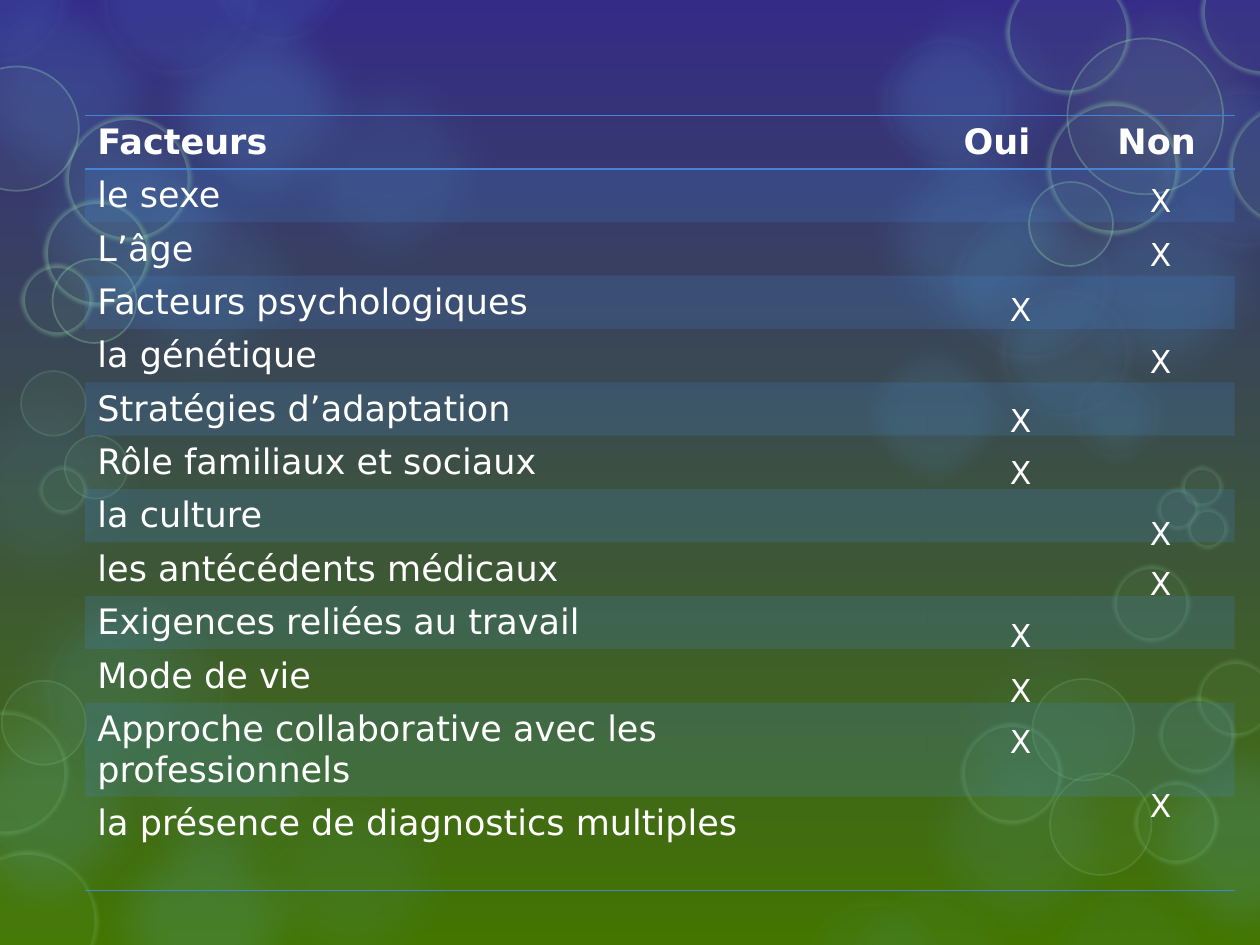
"""Build a slide with a table of factors, yes/no marks and a backdrop of soft circles."""
from lxml.etree import SubElement
from pptx import Presentation
from pptx.dml.color import RGBColor as RGB
from pptx.enum.shapes import MSO_SHAPE as Shape
from pptx.enum.text import MSO_AUTO_SIZE as Fit, PP_ALIGN as Align
from pptx.oxml import parse_xml
from pptx.oxml.ns import nsdecls, qn
from pptx.util import Pt

FONT, WHITE, ACCENT = "DejaVu Sans", "FFFFFF", "4584D3"
SKY, PALE, MINT = "5BBAF6", "DDF1FD", "9DE3AE"
BACK = ["342B87", "437500"]
NO_STYLE = "{2D5ABB26-0587-4C30-8999-92F81FD0307C}"

HEAD = ["Facteurs", "Oui ", "Non"]
FACTORS = [
    ("le sexe", "Non", 100),
    ("L’âge", "Non", 131),
    ("Facteurs psychologiques", "Oui", 162),
    ("la génétique", "Non", 192),
    ("Stratégies d’adaptation", "Oui", 225.5),
    ("Rôle familiaux et sociaux", "Oui", 255.5),
    ("la culture", "Non", 290),
    ("les antécédents médicaux", "Non", 319),
    ("Exigences reliées au travail", "Oui", 348.5),
    ("Mode de vie", "Oui", 380),
    ("Approche collaborative avec les professionnels", "Oui", 409),
    ("la présence de diagnostics multiples", "Non", 445.5),
]
MARK_X = {"Oui": 570, "Non": 650}
LEFT, TOP = 48.5, 66
WIDTHS = [481.5, 86.5, 89]
ROW, TALL = 30.5, 53.7

GLOWS = [
    (SKY, 5, [(525, 343)]),
    (SKY, 8, [(-18, 318), (55, 377), (125, 429), (-50, 203)]),
    (SKY, 10, [(41, 86), (148, 22), (482, -21), (508, 405)]),
    (MINT, 10, [(590, -23)]),
    (SKY, 14, [(-40, -23)]),
    (SKY, 15, [(0, 52), (590, 86), (482, 62)]),
    (SKY, 16, [(41, 451), (634, 405), (-49, 390)]),
    (SKY, 20, [(73, -13)]),
]
GLOW_SIZE, GLOW_SOFT = 150, 25

RINGS = [
    (SKY, 10, None, 12, [(486, 189, 96)]),
    (SKY, 10, (PALE, 14, 6), 12, [
        (661, 47, 99), (500, 17, 82), (541, 114, 96), (568, 161, 82),
        (610, 210, 57), (54, -47, 94), (118, -54, 82), (-41, -42, 82)]),
    (SKY, 6, (PALE, 14, 4), 12, [
        (22, 341, 110), (454, 511, 90), (482, 505, 99), (596, 505, 96)]),
    (MINT, 5, (MINT, 5, 15), 2.5, [
        (-25, 486, 81), (-32, 406, 71), (549, 413, 58), (648, 446, 48),
        (636, 323, 44), (662, 398, 44), (684, 377, 44), (675, 266, 24),
        (661, 279, 24), (678, 290, 24), (22, 266, 28)]),
    (MINT, 5, (MINT, 5, 30), 2.5, [
        (37, 66, 72), (25, 114, 61), (12, 151, 41), (575, -17, 71),
        (686, -29, 72), (702, 59, 71), (598, 58, 76)]),
    (MINT, 5, (MINT, 1, 15), 0, [
        (1, 389, 48), (600, 442, 58), (590, 388, 58), (12, 212, 37), (37, 249, 36)]),
    (MINT, 5, (MINT, 1, 30), 0, [
        (-26, 38, 71), (30, 148, 48), (610, 22, 89), (588, 104, 48)]),
]


def paint(fill, color, box, alpha):
    fill.solid()
    fill.fore_color.rgb = RGB.from_string(color)
    tone = box.find(qn("a:solidFill"))[0]
    SubElement(tone, qn("a:alpha")).set("val", str(alpha * 1000))


def circle(slide, x, y, size, color, alpha, rim, soft):
    dot = slide.shapes.add_shape(Shape.OVAL, Pt(x), Pt(y), Pt(size), Pt(size))
    props = dot._element.spPr
    paint(dot.fill, color, props, alpha)
    if rim:
        tint, width, fade = rim
        dot.line.width = Pt(width)
        paint(dot.line.fill, tint, props.find(qn("a:ln")), fade)
    else:
        dot.line.fill.background()
    dot.shadow.inherit = False
    if soft:
        edge = SubElement(props.find(qn("a:effectLst")), qn("a:softEdge"))
        edge.set("rad", str(Pt(soft)))


def style(para, size, bold=False):
    for run in para.runs:
        run.font.name, run.font.size, run.font.bold = FONT, Pt(size), bold
        run.font.color.rgb = RGB.from_string(WHITE)


def rule(cell, sides):
    for spot, side in enumerate(sides):
        cell._tc.get_or_add_tcPr().insert(spot, parse_xml(
            f'<a:{side} {nsdecls("a")} w="{Pt(1)}"><a:solidFill>'
            f'<a:srgbClr val="{ACCENT}"/></a:solidFill></a:{side}>'))


def add_grid(slide):
    heights = [ROW] * (len(FACTORS) - 1) + [TALL] * 2
    table = slide.shapes.add_table(
        len(heights), len(WIDTHS), Pt(LEFT), Pt(TOP),
        Pt(sum(WIDTHS)), Pt(sum(heights))).table
    table.first_row = table.horz_banding = False
    table._tbl.tblPr.find(qn("a:tableStyleId")).text = NO_STYLE
    for col, width in zip(table.columns, WIDTHS):
        col.width = Pt(width)
    texts = [HEAD] + [[name, "", ""] for name, _, _ in FACTORS]
    for r, (row, height, words) in enumerate(zip(table.rows, heights, texts)):
        row.height = Pt(height)
        for c, (cell, word) in enumerate(zip(row.cells, words)):
            cell.text = word
            para = cell.text_frame.paragraphs[0]
            para.alignment = Align.CENTER if c else Align.LEFT
            style(para, 20, r == 0)
            if r % 2:
                paint(cell.fill, ACCENT, cell._tc.get_or_add_tcPr(), 20)
            else:
                cell.fill.background()
            if r == 0:
                rule(cell, ["lnT", "lnB"])
            elif r == len(FACTORS):
                rule(cell, ["lnB"])


def add_mark(slide, x, y):
    box = slide.shapes.add_textbox(Pt(x), Pt(y), Pt(27.4), Pt(29))
    frame = box.text_frame
    frame.word_wrap = False
    frame.auto_size = Fit.SHAPE_TO_FIT_TEXT
    frame.text = "X"
    style(frame.paragraphs[0], 18)


def main():
    deck = Presentation()
    deck.slide_width, deck.slide_height = Pt(720), Pt(540)
    slide = deck.slides.add_slide(deck.slide_layouts[6])
    back = slide.background.fill
    back.gradient()
    back.gradient_angle = 270
    for stop, color in zip(back.gradient_stops, BACK):
        stop.color.rgb = RGB.from_string(color)
    for color, alpha, spots in GLOWS:
        for x, y in spots:
            circle(slide, x, y, GLOW_SIZE, color, alpha, None, GLOW_SOFT)
    for color, alpha, rim, soft, spots in RINGS:
        for x, y, size in spots:
            circle(slide, x, y, size, color, alpha, rim, soft)
    add_grid(slide)
    for _, answer, y in FACTORS:
        add_mark(slide, MARK_X[answer], y)
    deck.save("out.pptx")


if __name__ == "__main__":
    main()
